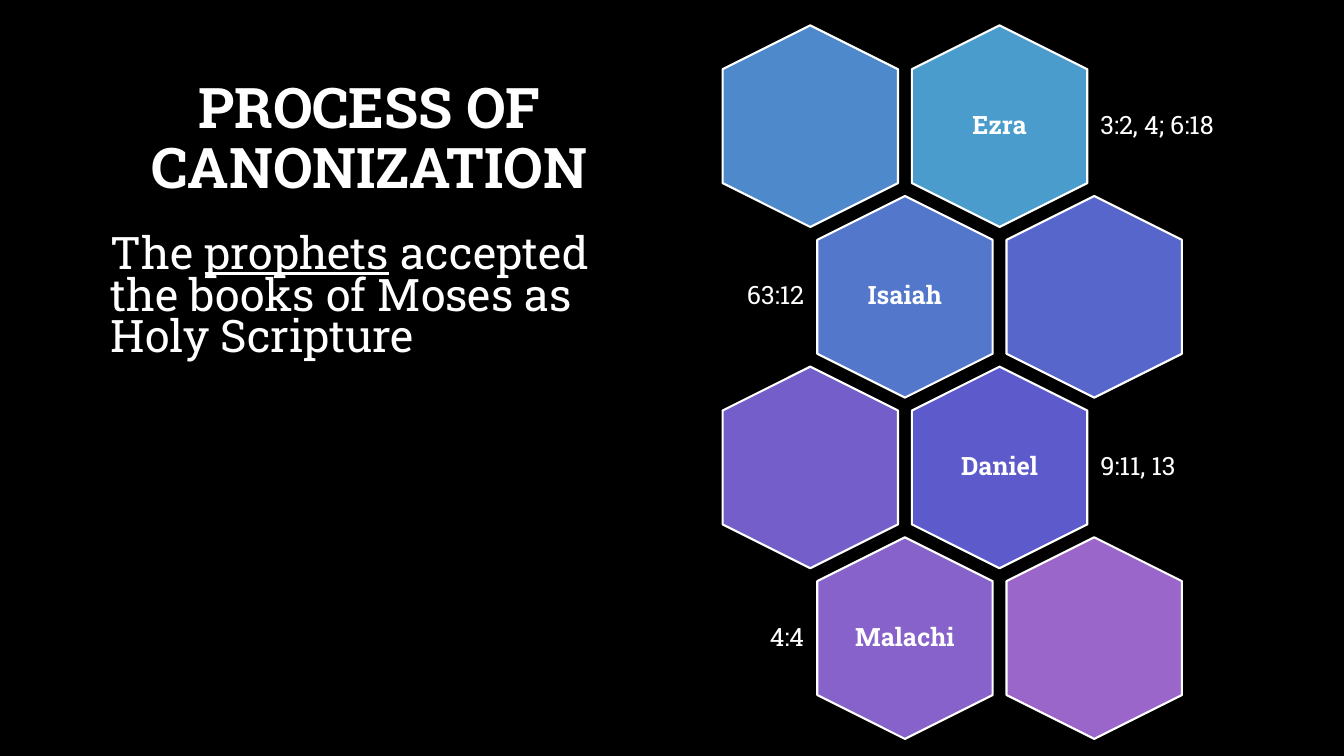
"""Builds the slide on the process of canonization."""
from lxml import etree
from pptx import Presentation
from pptx.dml.color import RGBColor
from pptx.enum.shapes import MSO_SHAPE
from pptx.enum.text import MSO_ANCHOR, MSO_AUTO_SIZE, PP_ALIGN
from pptx.oxml.ns import qn
from pptx.util import Cm, Pt

HEXAGON = MSO_SHAPE.HEXAGON
MIDDLE, TOP = MSO_ANCHOR.MIDDLE, MSO_ANCHOR.TOP
NO_FIT = MSO_AUTO_SIZE.NONE
LEFT, CENTER, RIGHT = PP_ALIGN.LEFT, PP_ALIGN.CENTER, PP_ALIGN.RIGHT

BLACK = RGBColor(0x00, 0x00, 0x00)
WHITE = RGBColor(0xFF, 0xFF, 0xFF)
SKY = RGBColor(0x4A, 0x9C, 0xCC)
BLUE = RGBColor(0x4E, 0x89, 0xCC)
AZURE = RGBColor(0x52, 0x77, 0xCB)
COBALT = RGBColor(0x56, 0x66, 0xCB)
INDIGO = RGBColor(0x5D, 0x5A, 0xCB)
VIOLET = RGBColor(0x73, 0x5E, 0xCA)
PURPLE = RGBColor(0x87, 0x62, 0xCA)
ORCHID = RGBColor(0x9A, 0x66, 0xCA)

HEX_LENGTH, HEX_WIDTH = 5.08, 4.42
FIRST_X, FIRST_Y = 20.42, 3.18
COLUMN_STEP, ROW_STEP = 4.77, 4.3
CITATION_GAP = 2.36

ROWS = [
    ("Ezra", "3:2, 4; 6:18", SKY, BLUE),
    ("Isaiah", "63:12", AZURE, COBALT),
    ("Daniel", "9:11, 13", INDIGO, VIOLET),
    ("Malachi", "4:4", PURPLE, ORCHID),
]


class SlideBuilder:
    """Holds the style and the current slide."""

    font_name = "Roboto Slab"

    def __init__(self, deck):
        self.page = deck.slides.add_slide(deck.slide_layouts[1])
        self.page.background.fill.solid()
        self.page.background.fill.fore_color.rgb = BLACK

    def place(self, shape, left, top, width, height):
        """Move and size a shape, in centimetres."""
        shape.left, shape.top = Cm(left), Cm(top)
        shape.width, shape.height = Cm(width), Cm(height)

    def style(self, paragraph, size, align, spacing, bold=False):
        """Format one paragraph."""
        paragraph.alignment = align
        paragraph.line_spacing = spacing
        font = paragraph.font
        font.name, font.size, font.bold = self.font_name, Pt(size), bold
        font.color.rgb = WHITE

    def title(self, text, *bounds):
        """Fill the title placeholder."""
        box = self.page.shapes.title
        self.place(box, *bounds)
        frame = box.text_frame
        frame.text = text
        frame.auto_size, frame.vertical_anchor = NO_FIT, MIDDLE
        self.style(frame.paragraphs[0], 40, CENTER, 0.9, bold=True)

    def body(self, pieces, *bounds):
        """Fill the body placeholder from pairs of text and underline."""
        box = self.page.placeholders[1]
        self.place(box, *bounds)
        frame = box.text_frame
        frame.auto_size, frame.vertical_anchor = NO_FIT, TOP
        para = frame.paragraphs[0]
        self.style(para, 32, LEFT, Pt(30))
        para.space_before = Pt(10)
        for text, underline in pieces:
            span = para.add_run()
            span.text = text
            span.font.underline = underline
        properties = para._p.get_or_add_pPr()
        properties.set("marL", "0")
        properties.set("indent", "0")
        bullet = etree.Element(qn("a:buNone"))
        properties.find(qn("a:defRPr")).addprevious(bullet)

    def hexagon(self, center_x, center_y, color):
        """Draw a hexagon standing on its point."""
        shape = self.page.shapes.add_shape(
            HEXAGON, Cm(center_x - HEX_LENGTH / 2), Cm(center_y - HEX_WIDTH / 2),
            Cm(HEX_LENGTH), Cm(HEX_WIDTH))
        shape.rotation = 90
        shape.adjustments[0] = 0.25
        shape.shadow.inherit = False
        shape.fill.solid()
        shape.fill.fore_color.rgb = color
        shape.line.color.rgb = WHITE
        shape.line.width = Pt(1.5)

    def label(self, text, left, center_y, width, align, bold=False):
        """Add a one-line text box centred on a height."""
        height = 3.05
        box = self.page.shapes.add_textbox(
            Cm(left), Cm(center_y - height / 2), Cm(width), Cm(height))
        frame = box.text_frame
        frame.word_wrap, frame.vertical_anchor = True, MIDDLE
        frame.margin_left = frame.margin_right = Cm(0.18)
        frame.margin_top = frame.margin_bottom = Cm(0.18)
        frame.text = text
        self.style(frame.paragraphs[0], 18, align, 0.9, bold)


def main():
    """Build and save the deck."""
    deck = Presentation()
    deck.slide_width, deck.slide_height = Cm(33.87), Cm(19.05)
    builder = SlideBuilder(deck)
    builder.title("PROCESS OF CANONIZATION", 2.54, 1.7, 13.54, 3.68)
    builder.body([("The ", False), ("prophets", True),
                  (" accepted the books of Moses as Holy Scripture", False)],
                 2.54, 5.82, 13.77, 10.26)

    for row, (book, verses, book_color, plain_color) in enumerate(ROWS):
        shifted = row % 2 == 1
        left_x = FIRST_X + shifted * COLUMN_STEP / 2
        right_x = left_x + COLUMN_STEP
        center_y = FIRST_Y + row * ROW_STEP
        book_x, plain_x = (left_x, right_x) if shifted else (right_x, left_x)
        builder.hexagon(book_x, center_y, book_color)
        builder.hexagon(plain_x, center_y, plain_color)
        builder.label(book, book_x - 1.53, center_y, 3.06, CENTER, bold=True)
        if shifted:
            builder.label(verses, book_x - CITATION_GAP - 5.5, center_y, 5.5, RIGHT)
        else:
            builder.label(verses, book_x + CITATION_GAP, center_y, 5.66, LEFT)
    deck.save("out.pptx")


if __name__ == "__main__":
    main()
